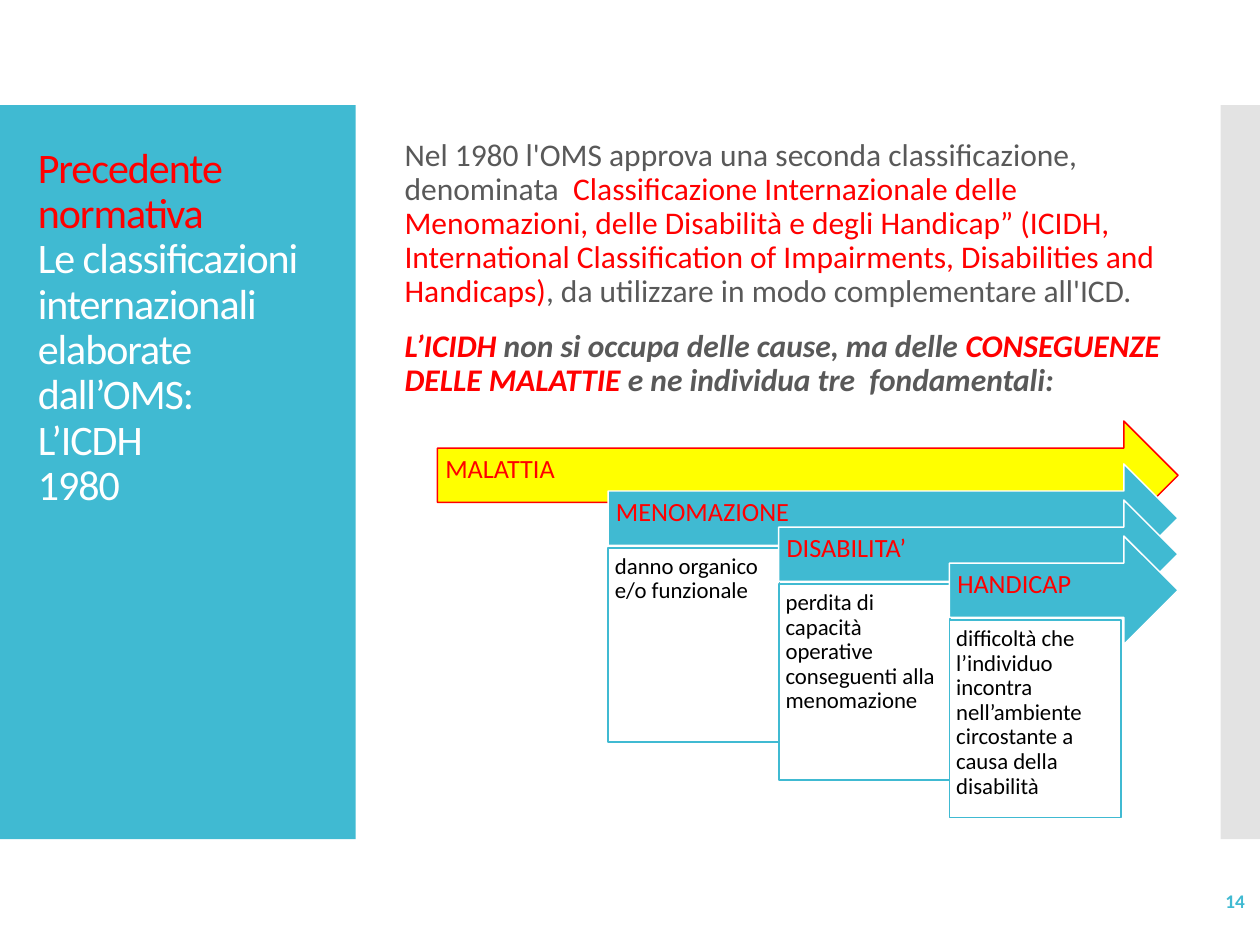
from copy import deepcopy

from lxml.etree import SubElement
from pptx import Presentation
from pptx.dml.color import RGBColor
from pptx.enum.shapes import MSO_SHAPE as SHAPE
from pptx.enum.text import MSO_ANCHOR as ANCHOR, MSO_AUTO_SIZE as AUTO, PP_ALIGN as ALIGN
from pptx.oxml.ns import qn
from pptx.util import Pt

COLORS = {"teal": "40BAD2", "gray": "C8C8C8", "text": "595959", "red": "FF0000",
          "yellow": "FFFF00", "white": "FFFFFF", "black": "000000"}
FONT = "Calibri"

TITLE = [[("Precedente normativa\n", "red"),
          ("Le classificazioni internazionali elaborate dall’OMS:\nL’ICDH\n1980", "white")]]
INTRO = [("Nel 1980 l'OMS approva una seconda classificazione, denominata  ", "text"),
         ("Classificazione Internazionale delle Menomazioni, delle Disabilità e degli "
          "Handicap” (ICIDH, International Classification of Impairments, Disabilities "
          "and Handicaps)", "red"),
         (", da utilizzare in modo complementare all'ICD.", "text")]
FOCUS = [("L’ICIDH", "red"),
         (" non si occupa delle cause, ma delle ", "text"),
         ("CONSEGUENZE DELLE MALATTIE ", "red"),
         ("e ne individua tre  fondamentali:", "text")]
CONSEQUENCES = [
    ("MENOMAZIONE", "danno organico e/o funzionale", 111),
    ("DISABILITA’", "perdita di capacità operative conseguenti alla menomazione", 112),
    ("HANDICAP", "difficoltà che l’individuo incontra nell’ambiente circostante "
                 "a causa della disabilità", 113),
]

ARROW_LEFT, ARROW_RIGHT, ARROW_HEIGHT = 250, 673.2, 62
STEP_X, STEP_Y = 97.5, 20.6
FIRST_TOP, SECOND_TOP = 240.6, 265.1
BOX_DROP, BOX_WIDTH = 48, 98


def color(name):
    return RGBColor.from_string(COLORS[name])


def add_run(p, text, name, size, bold, italic, spacing):
    """Add text to a paragraph; each newline becomes a line break of the same size."""
    for i, line in enumerate(text.split("\n")):
        if i:
            br = SubElement(p._p, qn("a:br"))
            br.append(deepcopy(r._r.get_or_add_rPr()))
        if line:
            r = p.add_run()
            r.text = line
            font = r.font
            font.name, font.size, font.bold, font.italic = FONT, Pt(size), bold, italic
            font.color.rgb = color(name)
            if spacing:
                r._r.get_or_add_rPr().set("spc", str(round(spacing * 100)))


def write(sp, paragraphs, size, align=ALIGN.LEFT, anchor=ANCHOR.MIDDLE, insets=None,
          bold=(), spacing=0, line_spacing=0.9, before=0):
    """Fill a shape with paragraphs of (text, colour) runs; bold lists bold italic ones."""
    tf = sp.text_frame
    tf.word_wrap = True
    tf.auto_size = AUTO.NONE
    tf.vertical_anchor = anchor
    if insets:
        tf.margin_left, tf.margin_top, tf.margin_right, tf.margin_bottom = map(Pt, insets)
    for i, runs in enumerate(paragraphs):
        p = tf.add_paragraph() if i else tf.paragraphs[0]
        p.alignment, p.line_spacing = align, line_spacing
        p.space_before = Pt(before if i else 0)
        strong = i in bold
        for text, name in runs:
            add_run(p, text, name, size, strong, strong, spacing)


def add_shape(slide, kind, box, fill, line=None):
    sp = slide.shapes.add_shape(kind, *map(Pt, box))
    sp.shadow.inherit = False
    sp.fill.solid()
    sp.fill.fore_color.rgb = color(fill)
    if line:
        sp.line.color.rgb = color(line)
        sp.line.width = Pt(0.85)
    else:
        sp.line.fill.background()
    return sp


def add_panel(slide, box, fill, opacity=100):
    """Add a plain band behind the placeholders."""
    sp = add_shape(slide, SHAPE.RECTANGLE, box, fill)
    if opacity < 100:
        rgb = sp._element.spPr.find(qn("a:solidFill")).find(qn("a:srgbClr"))
        SubElement(rgb, qn("a:alpha")).set("val", str(opacity * 1000))
    slide.shapes._spTree.insert(2, sp._element)


def add_arrow(slide, left, top, label, fill, line):
    sp = add_shape(slide, SHAPE.RIGHT_ARROW,
                   (left, top, ARROW_RIGHT - left, ARROW_HEIGHT), fill, line)
    write(sp, [[(label, "red")]], 15, insets=(4.5, 4.5, 20, 10))


def add_description(slide, box, text):
    sp = add_shape(slide, SHAPE.RECTANGLE, box, "white", "teal")
    write(sp, [[(text, "black")]], 13, anchor=ANCHOR.TOP, insets=(3.9,) * 4)


def place(sp, box):
    sp.left, sp.top, sp.width, sp.height = map(Pt, box)
    return sp


def remove_bullets(sp):
    for p in sp.text_frame.paragraphs:
        pPr = p._p.get_or_add_pPr()
        pPr.set("marL", "0")
        pPr.set("indent", "0")
        SubElement(pPr, qn("a:buNone"))


def add_cascade(slide):
    add_arrow(slide, ARROW_LEFT, FIRST_TOP, "MALATTIA", "yellow", "red")
    for i, (label, text, height) in enumerate(CONSEQUENCES):
        left = ARROW_LEFT + (i + 1) * STEP_X
        top = SECOND_TOP + i * STEP_Y
        add_arrow(slide, left, top, label, "teal", "white")
        add_description(slide, (left, top + BOX_DROP, BOX_WIDTH, height), text)


def main():
    prs = Presentation()
    prs.slide_width, prs.slide_height = Pt(720), Pt(540)
    slide = prs.slides.add_slide(prs.slide_layouts[1])

    add_panel(slide, (0, 60, 203.3, 419.5), "teal")
    add_panel(slide, (697.5, 60, 22.5, 419.5), "gray", opacity=50)

    title = place(slide.shapes.title, (14.4, 68.4, 174.2, 238.3))
    write(title, TITLE, 24, spacing=-0.6)

    body = place(slide.placeholders[1], (224, 51.8, 465, 319))
    write(body, [INTRO, FOCUS], 18, anchor=ANCHOR.TOP, bold=(1,), before=12,
          insets=(7.2, 27.6, 7.2, 3.6))
    remove_bullets(body)

    number = slide.shapes.add_textbox(*map(Pt, (627.8, 500.4, 90.7, 28.8)))
    write(number, [[("14", "teal")]], 11, align=ALIGN.RIGHT, line_spacing=1)
    number.text_frame.paragraphs[0].runs[0].font.bold = True

    add_cascade(slide)
    prs.save("out.pptx")


if __name__ == "__main__":
    main()
